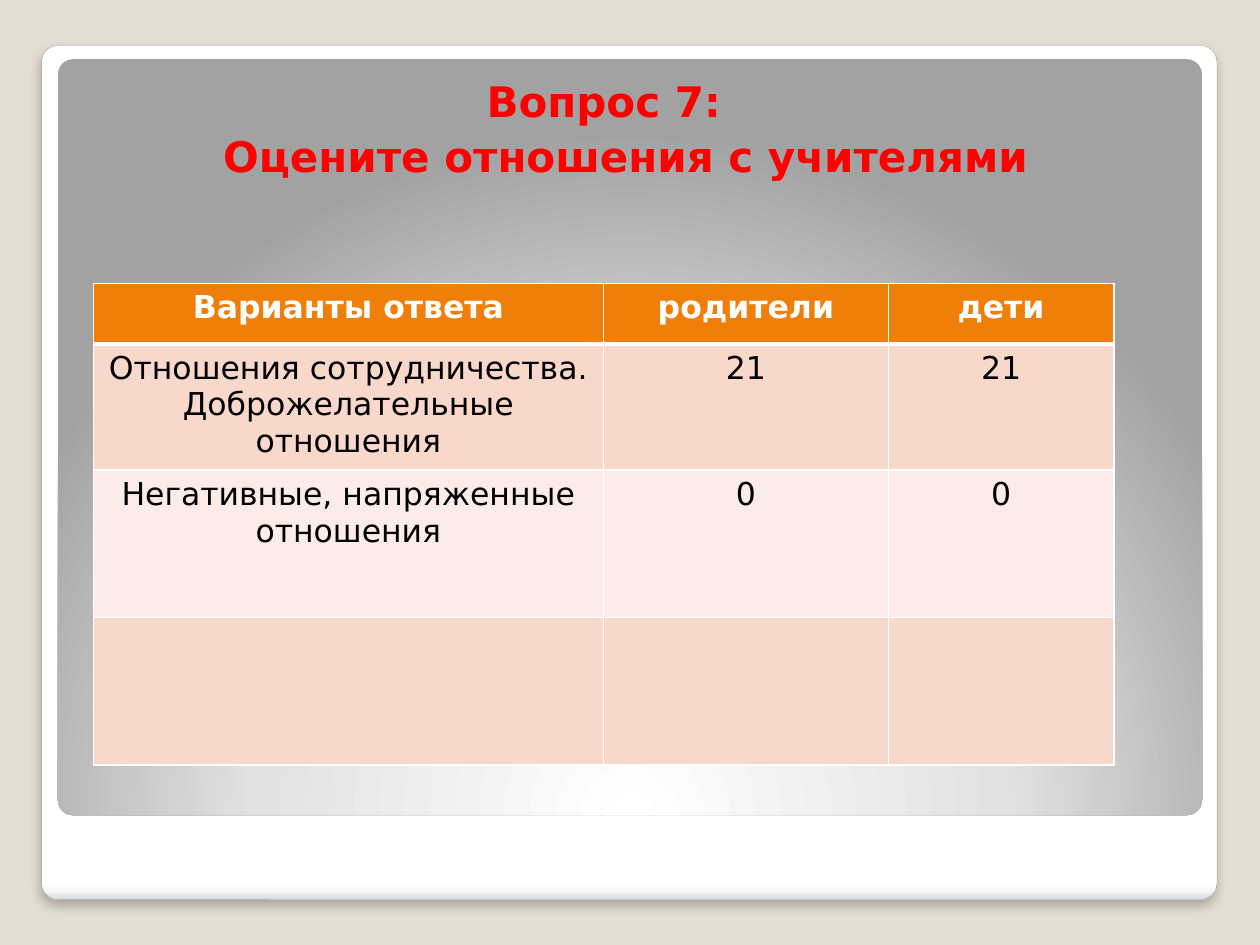
from lxml import etree
from pptx import Presentation
from pptx.dml.color import RGBColor
from pptx.enum import shapes, text
from pptx.oxml import parse_xml
from pptx.oxml.ns import nsdecls, qn
from pptx.util import Inches, Pt


def color(value):
    return RGBColor.from_string(value)


def write(paragraph, words, size=18, fill="000000", bold=False, before=0):
    paragraph.alignment = text.PP_ALIGN.CENTER
    paragraph.space_before = Pt(before)
    run = paragraph.add_run()
    run.text = words
    run.font.name = "DejaVu Sans"
    run.font.size = Pt(size)
    run.font.bold = bold
    run.font.color.rgb = color(fill)


deck = Presentation()
deck.slide_width, deck.slide_height = Inches(10), Inches(7.5)
slide = deck.slides.add_slide(deck.slide_layouts[6])
slide.background.fill.solid()
slide.background.fill.fore_color.rgb = color("E3DED1")

linear = '<a:lin ang="5400000" scaled="0"/>'
radial = '<a:path path="circle"><a:fillToRect l="50000" t="175000" r="50000" b="-75000"/></a:path>'
panels = [
    ((0.33, 0.36, 9.33, 6.78), [(0, "FFFFFF"), (98, "FFFFFF"), (99, "F7F7F7"), (100, "DADADA")], linear),
    ((0.46, 0.47, 9.08, 6), [(0, "FFFFFF"), (55, "E1E1E1"), (100, "A2A2A2")], radial),
]
frames = []
for box, stops, direction in panels:
    panel = slide.shapes.add_shape(shapes.MSO_SHAPE.ROUNDED_RECTANGLE, *map(Inches, box))
    panel.adjustments[0] = 0.02
    panel.line.fill.background()
    panel.shadow.inherit = False
    panel.fill.gradient()
    gradient = panel._element.spPr.find(qn("a:gradFill"))
    marks = "".join(f'<a:gs pos="{at * 1000}"><a:srgbClr val="{tone}"/></a:gs>' for at, tone in stops)
    gradient.getparent().replace(gradient, parse_xml(
        f'<a:gradFill {nsdecls("a")} rotWithShape="1"><a:gsLst>{marks}</a:gsLst>{direction}</a:gradFill>'))
    frames.append(panel)

card = frames[0]
card.line.color.rgb = color("A4A4A4")
card.line.width = Pt(0.16)
card._element.spPr.find(qn("a:effectLst")).append(parse_xml(
    f'<a:outerShdw {nsdecls("a")} blurRad="{Pt(6)}" dist="{Pt(4)}" dir="5400000" algn="t" rotWithShape="0">'
    '<a:srgbClr val="000000"><a:alpha val="25000"/></a:srgbClr></a:outerShdw>'))

question = slide.shapes.add_textbox(Inches(0.33), Inches(0.5), Inches(9.17), Inches(6.42)).text_frame
question.word_wrap = True
question.margin_left, question.margin_top = Inches(0.2), Inches(0.1)
question.margin_right, question.margin_bottom = Inches(0.1), Inches(0.05)
for index, words in enumerate(["Вопрос 7:   ", "Оцените отношения с учителями"]):
    paragraph = question.add_paragraph() if index else question.paragraphs[0]
    write(paragraph, words, size=24, fill="FF0000", bold=True, before=2.5)
    indent = paragraph._p.get_or_add_pPr()
    indent.set("marL", str(Inches(0.29)))
    indent.set("indent", str(Inches(-0.29)))

answers = [
    ["Варианты ответа", "родители", "дети"],
    ["Отношения сотрудничества. Доброжелательные отношения", "21", "21"],
    ["Негативные, напряженные отношения", "0", "0"],
    ["", "", ""],
]
row_fills = ["F07F09", "F9D8CC", "FCECE7", "F9D8CC"]
table = slide.shapes.add_table(4, 3, Inches(0.74), Inches(2.25), Inches(8.09), Inches(3.82)).table
for column, width in zip(table.columns, [4.05, 2.26, 1.79]):
    column.width = Inches(width)
for row, height in zip(table.rows, [0.48, 0.82, 1.17, 1.17]):
    row.height = Inches(height)

for r, answer in enumerate(answers):
    for c, words in enumerate(answer):
        cell = table.cell(r, c)
        header = r == 0
        if words:
            write(cell.text_frame.paragraphs[0], words, fill="FFFFFF" if header else "000000", bold=header)
        cell.fill.solid()
        cell.fill.fore_color.rgb = color(row_fills[r])
        borders = {"lnL": 1, "lnR": 1, "lnT": 3 if r == 1 else 1, "lnB": 3 if header else 1}
        for position, (side, weight) in enumerate(borders.items()):
            border = etree.Element(qn(f"a:{side}"), w=str(Pt(weight)))
            solid = etree.SubElement(border, qn("a:solidFill"))
            etree.SubElement(solid, qn("a:srgbClr"), val="FFFFFF")
            cell._tc.get_or_add_tcPr().insert(position, border)

deck.save("out.pptx")
